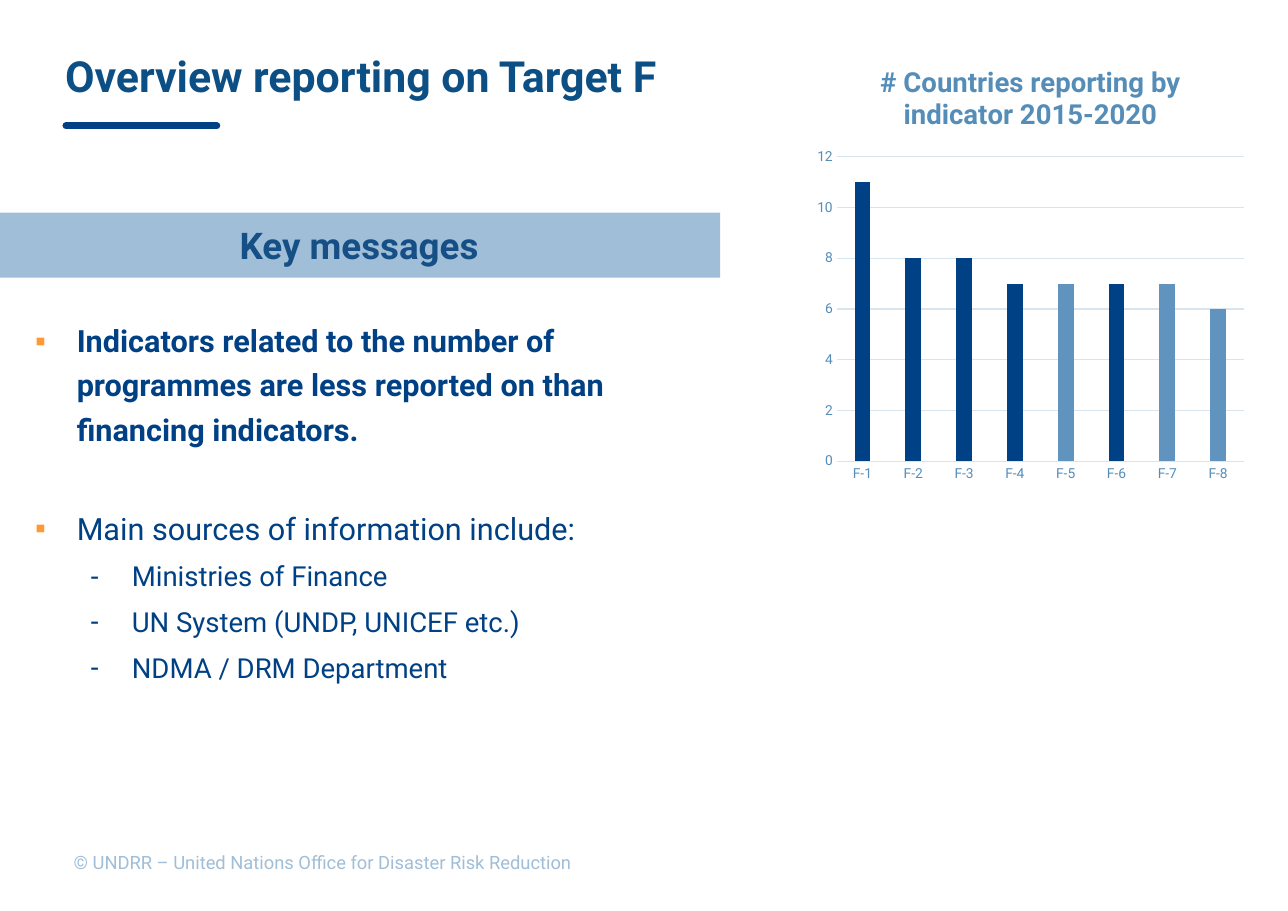
import pptx
import pptx.chart.data
import pptx.dml.color
import pptx.enum.chart
import pptx.enum.shapes
import pptx.enum.text
import pptx.oxml
import pptx.oxml.ns
import pptx.util
from pptx.util import Cm

NAVY, DEEP, BLUE, SKY = "004084", "0C4F85", "558DB9", "6093BD"
PALE, GRID, ORANGE = "A0BED7", "D8E5EF", "FF9933"

# text, level, bold, size, space before, bullet, bullet colour
POINTS = [
    ("Indicators related to the number of programmes are less reported on "
     "than financing indicators.", 0, True, 20, 0, "▪", ORANGE),
    ("Main sources of information include:", 0, False, 20, 36, "▪", ORANGE),
    ("Ministries of Finance", 1, False, 18, 4, "-", NAVY),
    ("UN System (UNDP, UNICEF etc.)", 1, False, 18, 4, "-", NAVY),
    ("NDMA / DRM Department", 1, False, 18, 4, "-", NAVY),
]
COUNTS = [11, 8, 8, 7, 7, 7, 7, 6]
LIGHT = (4, 6, 7)


def color(code):
    return pptx.dml.color.RGBColor.from_string(code)


def style(font, size, code, bold=False):
    font.name = "Roboto"
    font.size = pptx.util.Pt(size)
    font.bold = bold
    font.color.rgb = color(code)


def paint(fill, code):
    fill.solid()
    fill.fore_color.rgb = color(code)


def place(shape, left, top, width, height):
    """Move a placeholder (cm) and set its insets."""
    shape.left, shape.top = Cm(left), Cm(top)
    shape.width, shape.height = Cm(width), Cm(height)
    frame = shape.text_frame
    frame.auto_size = pptx.enum.text.MSO_AUTO_SIZE.NONE
    frame.margin_left, frame.margin_right = 0, Cm(0.28)
    frame.margin_top = frame.margin_bottom = Cm(0.15)
    return frame


def add_mark(para, mark, code, indent):
    """Give the paragraph a coloured bullet with a hanging indent."""
    props = para._p.get_or_add_pPr()
    props.set("marL", str(Cm(indent)))
    props.set("indent", str(-Cm(0.96)))
    space = pptx.oxml.ns.nsdecls("a")
    for xml in (f'<a:buClr {space}><a:srgbClr val="{code}"/></a:buClr>',
                f'<a:buChar {space} char="{mark}"/>'):
        props.append(pptx.oxml.parse_xml(xml))


def fill_title(shape):
    frame = place(shape, 1.5, 0.5, 26.72, 2.46)
    frame.vertical_anchor = pptx.enum.text.MSO_ANCHOR.MIDDLE
    frame.text = "Overview reporting on Target F"
    para = frame.paragraphs[0]
    para.alignment = pptx.enum.text.PP_ALIGN.LEFT
    style(para.runs[0].font, 28, DEEP, True)


def fill_body(shape):
    frame = place(shape, 0.81, 7.11, 13.44, 12.19)
    frame.text = "\n".join(point[0] for point in POINTS)
    for para, point in zip(frame.paragraphs, POINTS):
        level, bold, size, gap, mark, code = point[1:]
        add_mark(para, mark, code, 0.96 + 1.27 * level)
        para.level = level
        para.line_spacing = 1.2
        para.space_before = pptx.util.Pt(gap)
        style(para.runs[0].font, size, NAVY, bold)


def add_rule(shapes):
    rule = shapes.add_connector(pptx.enum.shapes.MSO_CONNECTOR.STRAIGHT,
                                Cm(1.52), Cm(2.9), Cm(5), Cm(2.9))
    rule.line.width = pptx.util.Pt(4.5)
    rule.line.color.rgb = color(NAVY)
    props = rule._element.spPr
    props.find(pptx.oxml.ns.qn("a:ln")).set("cap", "rnd")
    props.append(pptx.oxml.parse_xml(
        f'<a:effectLst {pptx.oxml.ns.nsdecls("a")}/>'))


def add_band(shapes):
    band = shapes.add_shape(pptx.enum.shapes.MSO_SHAPE.RECTANGLE,
                            Cm(-0.05), Cm(4.9), Cm(16.66), Cm(1.5))
    band.shadow.inherit = False
    paint(band.fill, PALE)
    band.line.fill.background()
    frame = band.text_frame
    frame.vertical_anchor = pptx.enum.text.MSO_ANCHOR.MIDDLE
    frame.text = "Key messages"
    para = frame.paragraphs[0]
    para.alignment = pptx.enum.text.PP_ALIGN.CENTER
    style(para.runs[0].font, 24, "154F86", True)


def add_credit(shapes):
    frame = shapes.add_textbox(Cm(1.45), Cm(19.5), Cm(26.16),
                               Cm(0.77)).text_frame
    frame.word_wrap = True
    frame.text = "© UNDRR – United Nations Office for Disaster Risk Reduction"
    style(frame.paragraphs[0].runs[0].font, 12, PALE)


def set_line(line, code):
    line.color.rgb = color(code)
    line.width = pptx.util.Pt(0.75)


def add_bars(shapes):
    data = pptx.chart.data.CategoryChartData()
    data.categories = [f"F-{n}" for n in range(1, len(COUNTS) + 1)]
    data.add_series("Series 1", COUNTS)
    chart = shapes.add_chart(
        pptx.enum.chart.XL_CHART_TYPE.COLUMN_CLUSTERED,
        Cm(18.64), Cm(1.02), Cm(10.24), Cm(10.29), data).chart
    style(chart.font, 10, "294A64")
    chart.has_legend = False
    chart.has_title = True
    frame = chart.chart_title.text_frame
    frame.text = "# Countries reporting by indicator 2015-2020"
    style(frame.paragraphs[0].runs[0].font, 18, BLUE, True)
    chart.chart_title.include_in_layout = False

    cats, vals = chart.category_axis, chart.value_axis
    for axis in (cats, vals):
        axis.major_tick_mark = pptx.enum.chart.XL_TICK_MARK.NONE
        style(axis.tick_labels.font, 9, BLUE)
    set_line(cats.format.line, GRID)
    vals.format.line.fill.background()
    vals.minimum_scale, vals.maximum_scale, vals.major_unit = 0, 12, 2
    set_line(vals.major_gridlines.format.line, GRID)

    plot = chart.plots[0]
    plot.vary_by_categories = False
    plot.gap_width, plot.overlap = 219, -27
    bars = plot.series[0]
    paint(bars.format.fill, NAVY)
    for index in LIGHT:
        paint(bars.points[index].format.fill, SKY)


def main():
    deck = pptx.Presentation()
    deck.slide_width, deck.slide_height = Cm(29.7), Cm(21)
    slide = deck.slides.add_slide(deck.slide_layouts[1])
    shapes = slide.shapes
    fill_title(shapes.title)
    fill_body(slide.placeholders[1])
    add_rule(shapes)
    add_credit(shapes)
    add_bars(shapes)
    add_band(shapes)
    deck.save("out.pptx")


if __name__ == "__main__":
    main()
